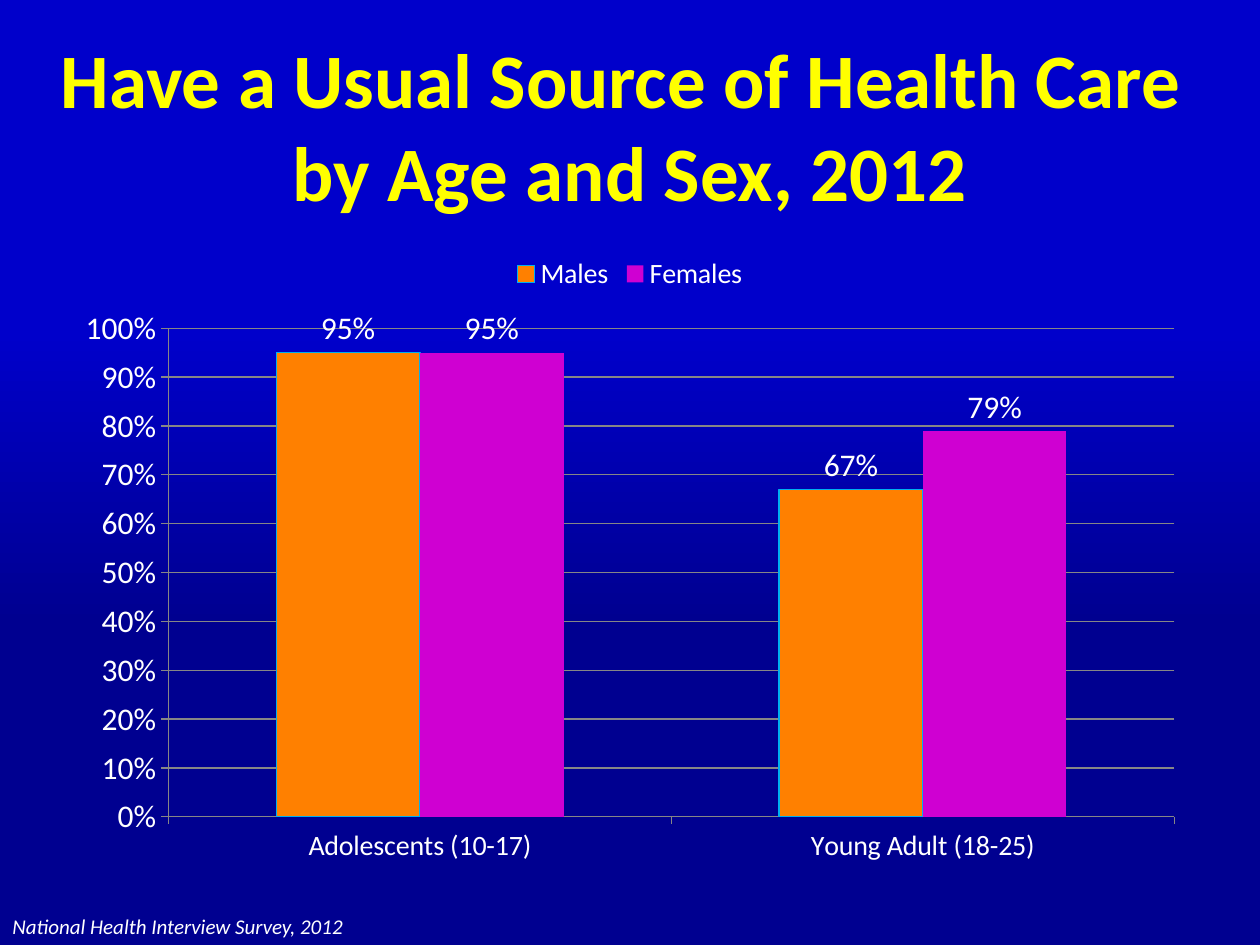
from pptx import Presentation
from pptx.chart.data import CategoryChartData
from pptx.dml.color import RGBColor
from pptx.enum.chart import XL_CHART_TYPE, XL_LABEL_POSITION, XL_LEGEND_POSITION, XL_TICK_MARK
from pptx.enum.text import MSO_ANCHOR, MSO_AUTO_SIZE, PP_ALIGN
from pptx.util import Cm, Pt

NAVY = RGBColor(0x00, 0x00, 0x90)
BLUE = RGBColor(0x00, 0x00, 0xCB)
YELLOW = RGBColor(0xFF, 0xFF, 0x00)
WHITE = RGBColor(0xFF, 0xFF, 0xFF)
ORANGE = RGBColor(0xFF, 0x80, 0x00)
MAGENTA = RGBColor(0xCF, 0x00, 0xD2)
CYAN = RGBColor(0x00, 0xB0, 0xF0)
GRAY = RGBColor(0x86, 0x86, 0x86)
FONT = "Calibri"

TITLE_LINES = ["Have a Usual Source of Health Care ", "by Age and Sex, 2012"]
SOURCE_NOTE = "National Health Interview Survey, 2012"
AGE_GROUPS = ["Adolescents (10-17)", "Young Adult (18-25)"]
SEXES = [
    ("Males", (0.95, 0.67), ORANGE, CYAN),
    ("Females", (0.95, 0.79), MAGENTA, None),
]
BACKGROUND_STOPS = [(0.34, NAVY), (0.65, BLUE)]


def style_font(font, size, color=WHITE, bold=False, italic=False):
    font.name = FONT
    font.size = Pt(size)
    font.color.rgb = color
    font.bold = bold
    font.italic = italic


def paint_background(page):
    fill = page.background.fill
    fill.gradient()
    fill.gradient_angle = 90
    for stop, (position, color) in zip(fill.gradient_stops, BACKGROUND_STOPS):
        stop.position = position
        stop.color.rgb = color


def add_title(page):
    title = page.shapes.title
    title.left, title.top, title.width, title.height = Cm(0), Cm(1.3), Cm(25.4), Cm(2.41)
    frame = title.text_frame
    frame.auto_size = MSO_AUTO_SIZE.NONE
    frame.vertical_anchor = MSO_ANCHOR.MIDDLE
    para = frame.paragraphs[0]
    para.alignment = PP_ALIGN.CENTER
    for index, line in enumerate(TITLE_LINES):
        if index:
            para.add_line_break()
        span = para.add_run()
        span.text = line
        style_font(span.font, 44, YELLOW, bold=True)


def add_care_chart(page):
    data = CategoryChartData(number_format="0%")
    data.categories = AGE_GROUPS
    for name, values, _, _ in SEXES:
        data.add_series(name, values)
    chart = page.shapes.add_chart(
        XL_CHART_TYPE.COLUMN_CLUSTERED, Cm(1.27), Cm(4.88), Cm(22.86), Cm(12.78), data
    ).chart
    chart.has_title = False
    style_font(chart.font, 18)
    chart.has_legend = True
    chart.legend.position = XL_LEGEND_POSITION.TOP
    chart.legend.include_in_layout = False
    style_font(chart.legend.font, 16)

    for axis, size in ((chart.category_axis, 16), (chart.value_axis, 18)):
        axis.major_tick_mark = XL_TICK_MARK.OUTSIDE
        axis.format.line.color.rgb = GRAY
        style_font(axis.tick_labels.font, size)
    scale = chart.value_axis
    scale.minimum_scale, scale.maximum_scale, scale.major_unit = 0, 1, 0.1
    scale.tick_labels.number_format = "0%"
    scale.tick_labels.number_format_is_linked = False
    scale.has_major_gridlines = True
    scale.major_gridlines.format.line.color.rgb = GRAY

    plot = chart.plots[0]
    plot.gap_width = 150
    plot.overlap = 0
    plot.vary_by_categories = False
    for series, (_, _, color, outline) in zip(plot.series, SEXES):
        series.format.fill.solid()
        series.format.fill.fore_color.rgb = color
        if outline:
            series.format.line.color.rgb = outline
            series.format.line.width = Pt(0.75)
        labels = series.data_labels
        labels.show_value = True
        labels.number_format = "0%"
        labels.number_format_is_linked = False
        labels.position = XL_LABEL_POSITION.OUTSIDE_END
        style_font(labels.font, 18)


def add_source_note(page):
    box = page.shapes.add_textbox(Cm(0), Cm(18.29), Cm(14.78), Cm(0.76))
    box.text_frame.word_wrap = True
    box.text_frame.auto_size = MSO_AUTO_SIZE.SHAPE_TO_FIT_TEXT
    span = box.text_frame.paragraphs[0].add_run()
    span.text = SOURCE_NOTE
    style_font(span.font, 12, italic=True)


def main():
    deck = Presentation()
    deck.slide_width, deck.slide_height = Cm(25.4), Cm(19.05)
    page = deck.slides.add_slide(deck.slide_layouts[5])
    paint_background(page)
    add_title(page)
    add_care_chart(page)
    add_source_note(page)
    deck.save("out.pptx")


if __name__ == "__main__":
    main()
